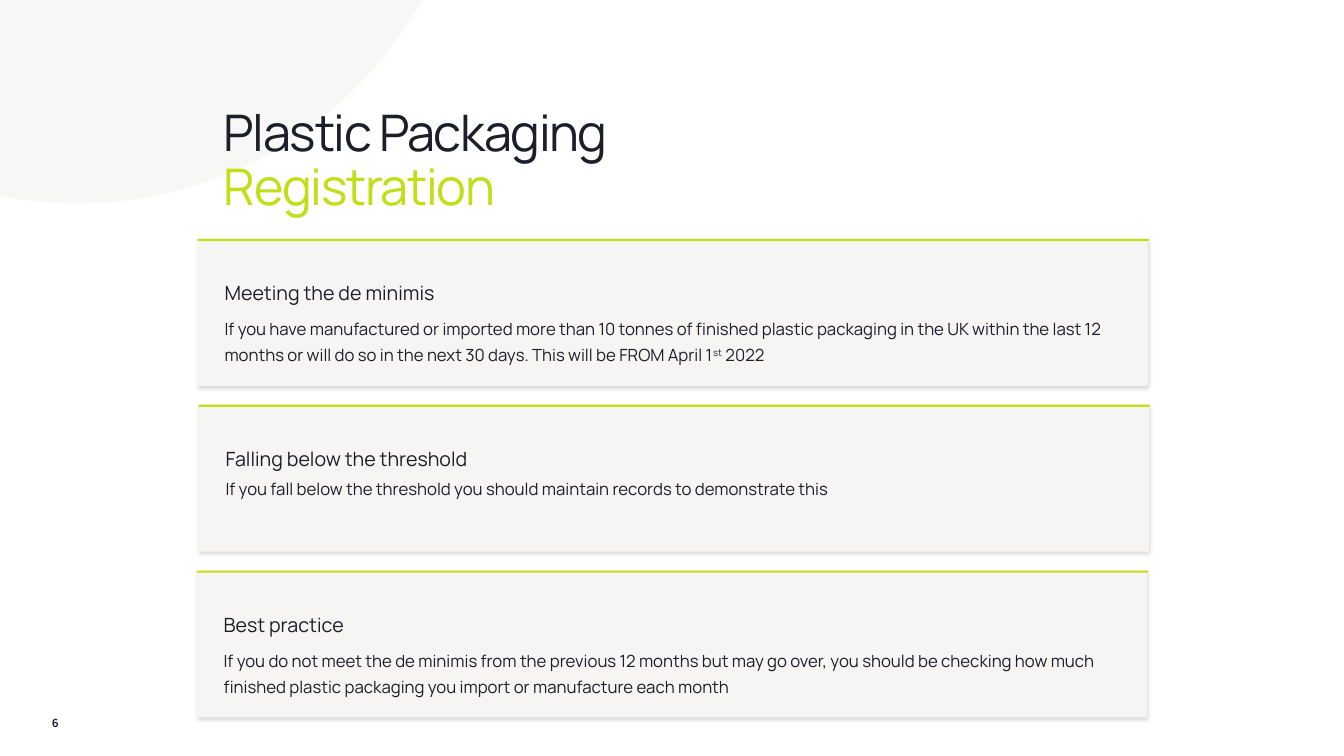
"""Build the slide on plastic packaging registration."""
from lxml import etree
from pptx import Presentation
from pptx.dml.color import RGBColor
from pptx.enum.shapes import MSO_SHAPE
from pptx.enum.text import MSO_ANCHOR, PP_ALIGN
from pptx.oxml.ns import qn
from pptx.util import Pt

OVAL, RECT = MSO_SHAPE.OVAL, MSO_SHAPE.RECTANGLE
TOP, MIDDLE = MSO_ANCHOR.TOP, MSO_ANCHOR.MIDDLE
LEFT, CENTER = PP_ALIGN.LEFT, PP_ALIGN.CENTER
INK = RGBColor(0x1C, 0x1F, 0x2A)
LIME = RGBColor(0xC0, 0xDF, 0x16)
PALE = RGBColor(0xF6, 0xF5, 0xF3)
SAND = RGBColor(0xE1, 0xDE, 0xD7)
FONT = "Manrope"

CARDS = [
    (140.4, "Meeting the de minimis", 1.3,
     ["If you have manufactured or imported more than 10 tonnes of finished "
      "plastic packaging in the UK within the last 12 months or will do so in "
      "the next 30 days. This will be FROM April 1", "st", " 2022"]),
    (141.1, "Falling below the threshold", None,
     ["If you fall below the threshold you should maintain records to "
      "demonstrate this"]),
    (139.7, "Best practice", 1.3,
     ["If you do not meet the de minimis from the previous 12 months but may "
      "go over, you should be checking how much finished plastic packaging "
      "you import or manufacture each month"]),
]


class Deck:
    """Hold the style and the current slide."""

    def __init__(self, slide):
        self.shapes = slide.shapes

    def block(self, home, kind, box, fill):
        shape = home.add_shape(kind, *map(Pt, box))
        shape.shadow.inherit = False
        shape.fill.solid()
        shape.fill.fore_color.rgb = fill
        shape.line.fill.background()
        return shape

    def disc(self, box, alpha):
        shape = self.block(self.shapes, OVAL, box, SAND)
        tint = next(shape.fill._xPr.iter(qn("a:srgbClr")))
        etree.SubElement(tint, qn("a:alpha"), val=str(alpha * 1000))

    def shade(self, shape):
        effects = shape._element.spPr.find(qn("a:effectLst"))
        cast = etree.SubElement(effects, qn("a:outerShdw"), blurRad=str(Pt(3)),
                                dist=str(Pt(1)), dir="2700000", algn="tl",
                                rotWithShape="0")
        tint = etree.SubElement(cast, qn("a:srgbClr"), val="000000")
        etree.SubElement(tint, qn("a:alpha"), val="15000")

    def frame(self, shape, inset, anchor):
        frame = shape.text_frame
        frame.word_wrap = True
        frame.vertical_anchor = anchor
        (frame.margin_left, frame.margin_top,
         frame.margin_right, frame.margin_bottom) = map(Pt, inset)
        return frame

    def style(self, para, size, align=LEFT, spacing=None, bold=False):
        para.alignment = align
        para.line_spacing = spacing
        for run in para.runs:
            run.font.name = FONT
            run.font.size = Pt(size)
            run.font.bold = bold
            run.font.color.rgb = INK

    def title(self, box, text):
        shape = self.shapes.add_textbox(*map(Pt, box))
        para = self.frame(shape, (0, 15, 0, 0), TOP).paragraphs[0]
        para.text = text
        self.style(para, 36, spacing=0.9)
        for run in para.runs:
            run._r.get_or_add_rPr().set("spc", "-100")
        para.runs[-1].font.color.rgb = LIME

    def number(self, box, text):
        shape = self.shapes.add_textbox(*map(Pt, box))
        para = self.frame(shape, (7.2, 3.6, 7.2, 3.6), MIDDLE).paragraphs[0]
        para.text = text
        self.style(para, 8, CENTER, bold=True)

    def card(self, left, top, head, spacing, parts):
        group = self.shapes.add_group_shape().shapes
        panel = self.block(group, RECT, (left, top, 679.5, 105), PALE)
        self.shade(panel)
        frame = self.frame(panel, (20, 25, 14.4, 3.6), TOP)
        frame.text = head
        self.style(frame.paragraphs[0], 14, spacing=1.3)
        body = frame.add_paragraph()
        for part in parts:
            body.add_run().text = part
        self.style(body, 12, spacing=spacing)
        body.space_before = Pt(6)
        for run in body.runs[1:2]:
            run._r.get_or_add_rPr().set("baseline", "30000")
        self.block(group, RECT, (left + 0.7, top, 679.5, 1.5), LIME)


def main():
    show = Presentation()
    show.slide_width, show.slide_height = Pt(960), Pt(540)
    deck = Deck(show.slides.add_slide(show.slide_layouts[6]))
    for left, alpha in ((-226.8, 18), (-223.9, 5)):
        deck.disc((left, -416.9, 562.3, 562.3), alpha)
    deck.number((0, 502, 79, 29), "6")
    deck.title((160, 62, 720, 98.6), "Plastic Packaging\vRegistration")
    for row, (left, head, spacing, parts) in enumerate(CARDS):
        deck.card(left, 170.7 + row * 118.4, head, spacing, parts)
    show.save("out.pptx")


if __name__ == "__main__":
    main()
